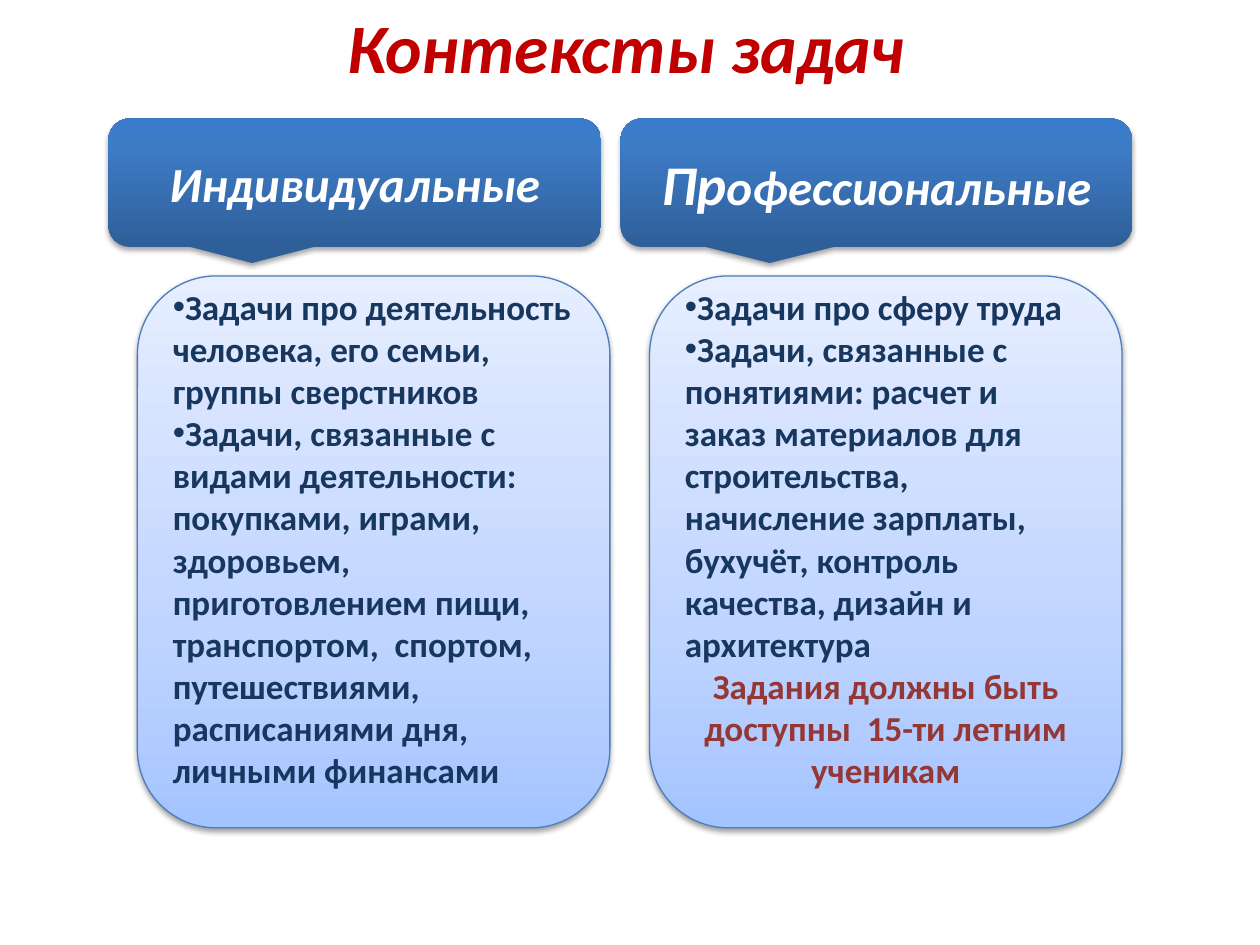
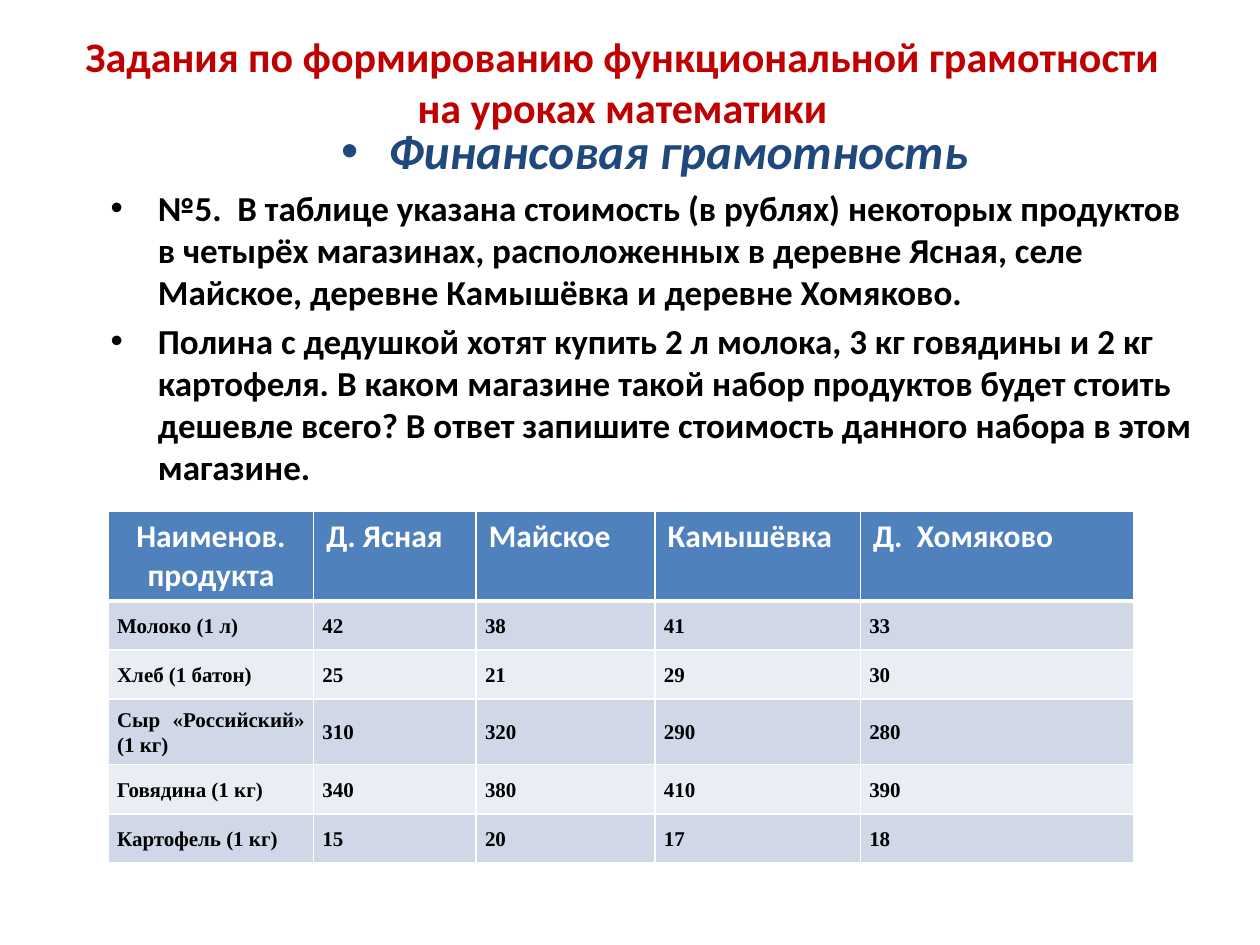
from dataclasses import dataclass, replace
from typing import Any

from lxml.etree import SubElement
from pptx import Presentation
from pptx.dml.color import RGBColor
from pptx.enum.shapes import MSO_SHAPE
from pptx.enum.text import MSO_ANCHOR, PP_ALIGN
from pptx.oxml.ns import qn
from pptx.util import Inches, Pt

WIDE, HIGH = Inches(10), Inches(7.5)
COL, ROW = WIDE / 100, HIGH / 75  # a grid of 100 columns by 75 rows

WHITE = RGBColor(0xFF, 0xFF, 0xFF)
BLACK = RGBColor(0, 0, 0)
RED = RGBColor(0xC0, 0, 0)
BRICK = RGBColor(0x95, 0x37, 0x35)
NAVY = RGBColor(0x17, 0x37, 0x5E)
BLUE = RGBColor(0x1F, 0x49, 0x7D)
EDGE = RGBColor(0x4B, 0x7E, 0xBC)
HEAD = RGBColor(0x4F, 0x81, 0xBD)
BANDS = (RGBColor(0xD0, 0xD8, 0xE8), RGBColor(0xE9, 0xED, 0xF4))
DEEP = ((0, RGBColor(0x2F, 0x5F, 0x99)), (80, RGBColor(0x3D, 0x7C, 0xC7)),
        (100, RGBColor(0x3A, 0x7C, 0xCB)))
PALE = ((0, RGBColor(0xA4, 0xC4, 0xFF)), (35, RGBColor(0xBF, 0xD4, 0xFF)),
        (100, RGBColor(0xE6, 0xEE, 0xFF)))


@dataclass(frozen=True)
class Style:
    size: float
    color: RGBColor
    slant: bool = False
    face: str = "Calibri"


@dataclass(frozen=True)
class Para:
    runs: tuple[tuple[str, Style], ...]
    align: PP_ALIGN = PP_ALIGN.LEFT
    dot: bool = False
    hang: float = 0
    before: float = 0
    lead: float | None = None


@dataclass(frozen=True)
class Box:
    """Left, top, width and height in grid columns and rows."""
    left: float
    top: float
    width: float
    height: float

    def place(self) -> tuple[int, int, int, int]:
        return (int(self.left * COL), int(self.top * ROW),
                int(self.width * COL), int(self.height * ROW))


@dataclass(frozen=True)
class Theme:
    head: tuple[tuple[str, Style], ...]
    width: float
    body: tuple[Para, ...]


TITLE = Style(39.6, RED, True)
TASK = Style(24, RED)
LABEL = Style(28, WHITE, True)
POINT = Style(20, NAVY)
NOTE = Style(20, BRICK)
TOPIC = Style(28, BLUE, True)
PLAIN = Style(20, BLACK)
TOP = Style(18, WHITE)
CELL = Style(12, BLACK, face="Times New Roman")


def line(text: str, style: Style, **form: Any) -> Para:
    return Para(((text, style),), **form)


def mid(text: str, style: Style, **form: Any) -> Para:
    return line(text, style, align=PP_ALIGN.CENTER, **form)


THEMES = (
    Theme((("Индивидуальные", LABEL),), 39.1, (
        line("Задачи про деятельность человека, его семьи, группы сверстников",
             POINT, dot=True),
        line("Задачи, связанные с видами деятельности: покупками, играми, здоровьем, "
             "приготовлением пищи, транспортом,  спортом, путешествиями, "
             "расписаниями дня, личными финансами", POINT, dot=True))),
    Theme((("Пр", replace(LABEL, size=32)), ("офессиональные", LABEL)), 40.6, (
        line("Задачи про сферу труда", POINT, dot=True),
        line("Задачи, связанные с понятиями: расчет и заказ материалов для "
             "строительства, начисление зарплаты, бухучёт, контроль качества, "
             "дизайн и архитектура", POINT, dot=True),
        mid("Задания должны быть доступны  15-ти летним ученикам", NOTE))),
)

TEXT = (
    mid("Финансовая грамотность", TOPIC, dot=True, hang=3.75),
    line("№5.  В таблице указана стоимость (в рублях) некоторых продуктов в четырёх "
         "магазинах, расположенных в деревне Ясная, селе Майское, деревне Камышёвка "
         "и деревне Хомяково.", PLAIN, dot=True, hang=3.75, before=4),
    line("Полина с дедушкой хотят купить 2 л молока, 3 кг говядины и 2 кг картофеля. "
         "В каком магазине такой набор продуктов будет стоить дешевле всего? В ответ "
         "запишите стоимость данного набора в этом магазине.",
         PLAIN, dot=True, hang=3.75, before=4),
)

COSTS = (
    ("Наименов. продукта", "Д. Ясная", "Майское", "Камышёвка", "Д.  Хомяково"),
    ("Молоко (1 л)", "42", "38", "41", "33"),
    ("Хлеб (1 батон)", "25", "21", "29", "30"),
    ("Сыр «Российский» (1 кг)", "310", "320", "290", "280"),
    ("Говядина (1 кг)", "340", "380", "410", "390"),
    ("Картофель (1 кг)", "15", "20", "17", "18"),
)
WIDTHS = (16.3, 12.9, 14.2, 16.3, 21.7)
HEIGHTS = (7.1, 3.9, 3.9, 5.2, 3.9, 3.9)


def write(frame: Any, paras: tuple[Para, ...]) -> None:
    frame.word_wrap = True
    for num, para in enumerate(paras):
        item = frame.add_paragraph() if num else frame.paragraphs[0]
        if para.dot:
            props = item._p.get_or_add_pPr()
            props.set("marL", str(int(para.hang * COL)))
            props.set("indent", str(-int(para.hang * COL)))
            SubElement(props, qn("a:buFont"), typeface="Arial")
            SubElement(props, qn("a:buChar"), char="•")
        item.alignment = para.align
        item.space_before = Pt(para.before)
        if para.lead:
            item.line_spacing = para.lead
        for text, style in para.runs:
            run = item.add_run()
            run.text = text
            font = run.font
            font.name, font.size = style.face, Pt(style.size)
            font.bold, font.italic = True, style.slant
            font.color.rgb = style.color


def add_text(slide: Any, box: Box, *paras: Para,
             anchor: MSO_ANCHOR = MSO_ANCHOR.MIDDLE) -> None:
    frame = slide.shapes.add_textbox(*box.place()).text_frame
    frame.vertical_anchor = anchor
    write(frame, paras)


def shade(shape: Any, stops: tuple[tuple[int, RGBColor], ...]) -> None:
    """Fill from bottom to top through the given stops."""
    shape.fill.gradient()
    shape.fill.gradient_angle = 90
    marks = shape._element.spPr.find(qn("a:gradFill")).find(qn("a:gsLst"))
    for old in list(marks):
        marks.remove(old)
    for share, color in stops:
        mark = SubElement(marks, qn("a:gs"), pos=str(share * 1000))
        SubElement(mark, qn("a:srgbClr"), val=str(color))


def drop(shape: Any, dark: int, shift: float) -> None:
    """Cast a soft shadow straight down."""
    shape.shadow.inherit = False
    group = shape._element.spPr.find(qn("a:effectLst"))
    cast = SubElement(group, qn("a:outerShdw"), blurRad=str(Pt(3.1)),
                      dist=str(Pt(shift)), dir="5400000", rotWithShape="0")
    tint = SubElement(cast, qn("a:srgbClr"), val=str(BLACK))
    SubElement(tint, qn("a:alpha"), val=str(dark * 1000))


def add_theme(slide: Any, theme: Theme, num: int) -> None:
    step = 40.65 * num
    head = slide.shapes.add_shape(MSO_SHAPE.ROUNDED_RECTANGULAR_CALLOUT,
                                  *Box(8.6 + step, 9.4, theme.width, 10.2).place())
    shade(head, DEEP)
    head.line.fill.background()
    drop(head, 35, 1.8)
    write(head.text_frame, (Para(theme.head, PP_ALIGN.CENTER),))
    card = slide.shapes.add_shape(MSO_SHAPE.ROUNDED_RECTANGLE,
                                  *Box(10.9 + step, 21.9, 37.5, 43.8).place())
    shade(card, PALE)
    card.line.color.rgb, card.line.width = EDGE, Pt(0.75)
    drop(card, 38, 1.6)
    card.text_frame.margin_bottom = int(2.7 * ROW)
    write(card.text_frame, theme.body)
    for shape in (head, card):
        shape.text_frame.vertical_anchor = MSO_ANCHOR.MIDDLE


def edge(cell: Any, base: float) -> None:
    """Draw white borders, with the bottom one of the given width."""
    props = cell._tc.get_or_add_tcPr()
    for side in "LRTB":
        rule = SubElement(props, qn(f"a:ln{side}"), w=str(Pt(base if side == "B" else 1)))
        SubElement(SubElement(rule, qn("a:solidFill")), qn("a:srgbClr"), val=str(WHITE))


def add_costs(slide: Any, box: Box) -> None:
    table = slide.shapes.add_table(len(COSTS), len(WIDTHS), *box.place()).table
    for col, width in zip(table.columns, WIDTHS):
        col.width = int(width * COL)
    for row, height in zip(table.rows, HEIGHTS):
        row.height = int(height * ROW)
    for y, row in enumerate(COSTS):
        for x, text in enumerate(row):
            cell = table.cell(y, x)
            edge(cell, 1 if y else 3)
            cell.fill.solid()
            cell.fill.fore_color.rgb = BANDS[(y - 1) % 2] if y else HEAD
            if y:
                cell.vertical_anchor = MSO_ANCHOR.MIDDLE
                cell.margin_left = cell.margin_right = int(0.7 * COL)
                cell.margin_top = cell.margin_bottom = 0
                para = line(text, CELL, align=PP_ALIGN.JUSTIFY, lead=1.07)
            else:
                para = line(text, TOP) if x else mid(text, TOP)
            write(cell.text_frame, (para,))


def main() -> None:
    deck = Presentation()
    deck.slide_width, deck.slide_height = WIDE, HIGH
    blank = deck.slide_layouts[6]

    slide = deck.slides.add_slide(blank)
    add_text(slide, Box(4.7, 0, 90, 7.2), mid("Контексты задач", TITLE))
    for num, theme in enumerate(THEMES):
        add_theme(slide, theme, num)

    slide = deck.slides.add_slide(blank)
    add_text(slide, Box(4.7, 2.1, 89.4, 8.7),
             mid("Задания по формированию функциональной грамотности "
                 "на уроках математики", TASK))
    add_text(slide, Box(7.8, 9.1, 88.3, 58.1), *TEXT, anchor=MSO_ANCHOR.TOP)
    add_costs(slide, Box(8.6, 40.6, sum(WIDTHS), sum(HEIGHTS)))

    deck.save("out.pptx")


if __name__ == "__main__":
    main()
